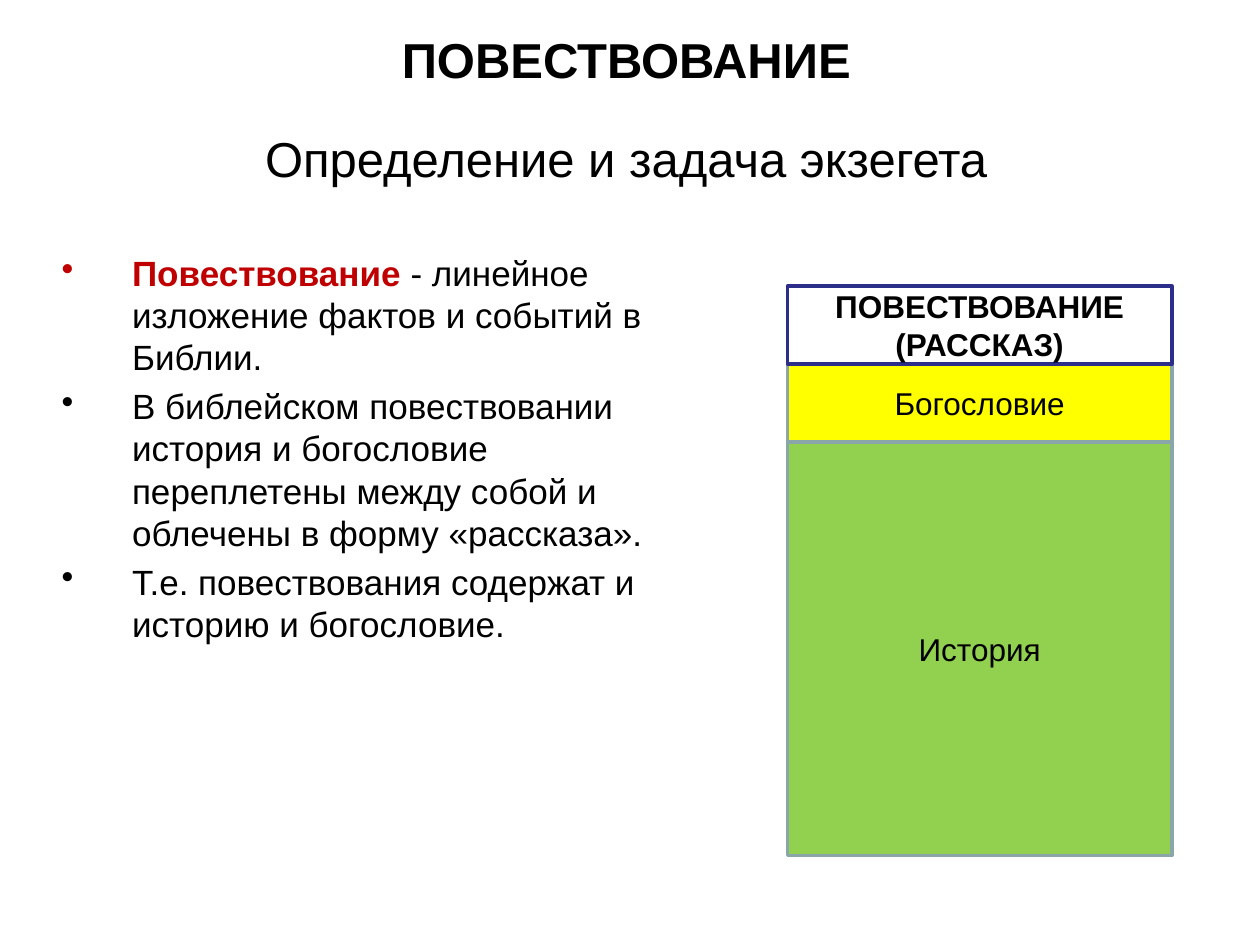
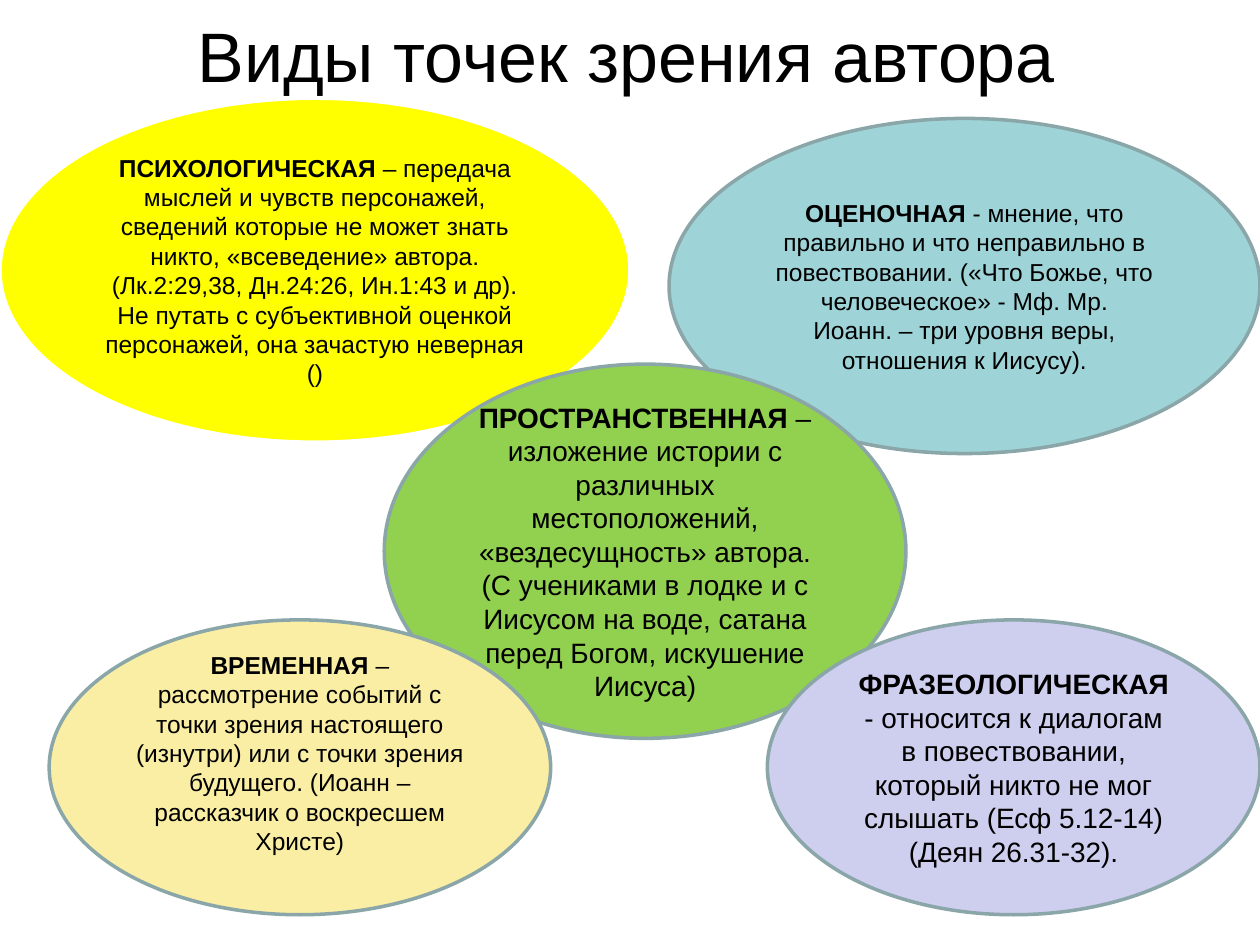
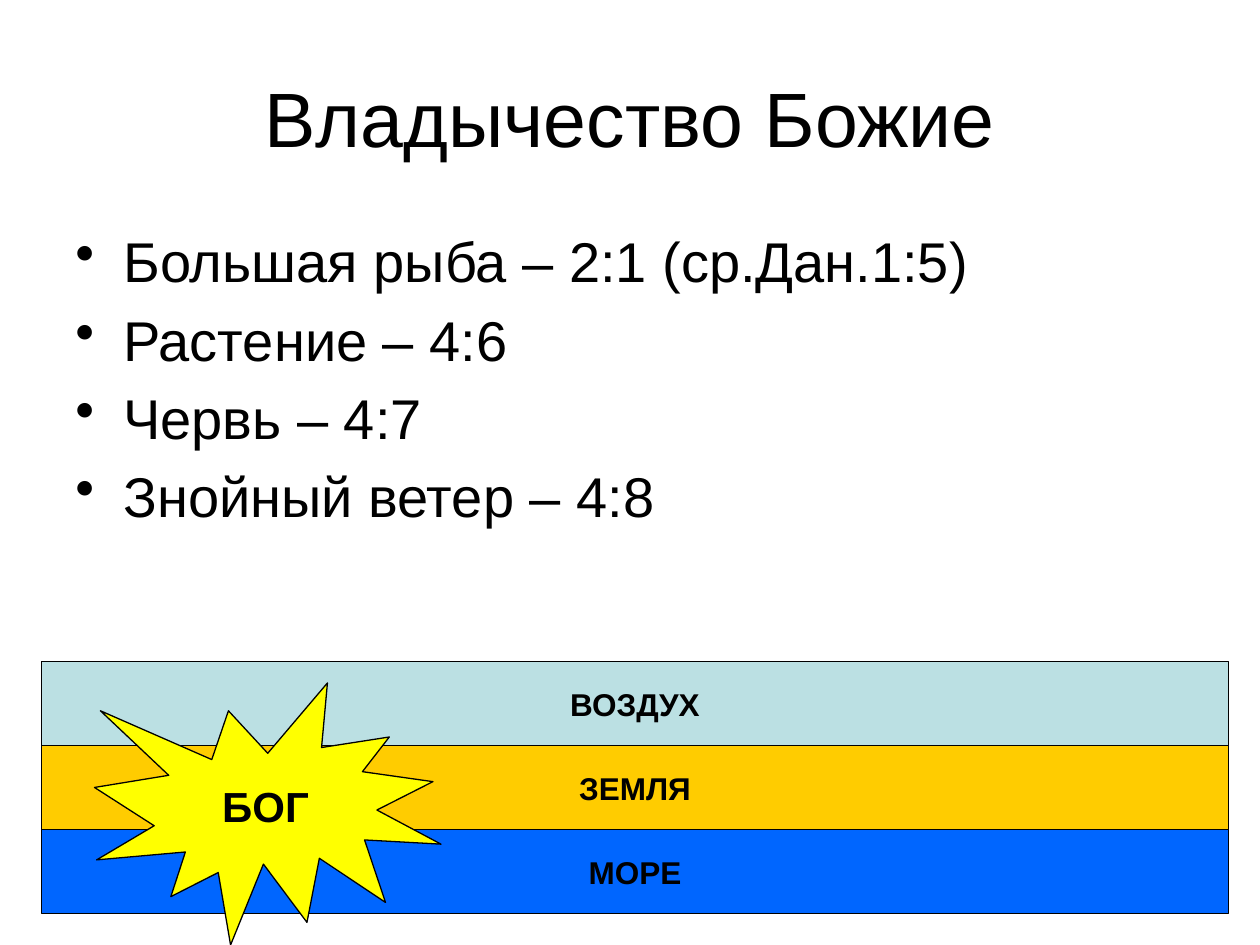
from lxml import etree
from pptx import Presentation
from pptx.dml.color import RGBColor
from pptx.enum.shapes import MSO_SHAPE
from pptx.enum.text import MSO_ANCHOR, PP_ALIGN
from pptx.oxml.ns import qn
from pptx.util import Inches, Pt

RECTANGLE = MSO_SHAPE.RECTANGLE
OVAL = MSO_SHAPE.OVAL
BURST = MSO_SHAPE.EXPLOSION1
MIDDLE = MSO_ANCHOR.MIDDLE
TOP = MSO_ANCHOR.TOP
CENTER = PP_ALIGN.CENTER
LEFT = PP_ALIGN.LEFT

BLACK = RGBColor(0x00, 0x00, 0x00)
WHITE = RGBColor(0xFF, 0xFF, 0xFF)
RED = RGBColor(0xC0, 0x00, 0x00)
YELLOW = RGBColor(0xFF, 0xFF, 0x00)
GREEN = RGBColor(0x92, 0xD0, 0x50)
GREY_TEAL = RGBColor(0x8A, 0xA6, 0xA8)
NAVY = RGBColor(0x2D, 0x2D, 0x8A)
TEAL = RGBColor(0x9E, 0xD3, 0xD7)
CREAM = RGBColor(0xFA, 0xEE, 0xA4)
LILAC = RGBColor(0xCE, 0xCE, 0xEF)
SEA_BLUE = RGBColor(0x00, 0x66, 0xFF)
EARTH = RGBColor(0xFF, 0xCC, 0x00)
AIR = RGBColor(0xBB, 0xE0, 0xE3)


class Deck:
    font_name = "Arial"

    def __init__(self):
        self.presentation = Presentation()
        self.presentation.slide_width = Inches(10)
        self.presentation.slide_height = Inches(7.5)
        self.slide = None

    def new_slide(self):
        layout = self.presentation.slide_layouts[6]
        self.slide = self.presentation.slides.add_slide(layout)

    def fill_frame(self, frame, lines, size, bold=False, lead="", lead_color=BLACK,
                   align=CENTER, anchor=MIDDLE, indent=None):
        frame.vertical_anchor = anchor
        for index, line in enumerate(lines):
            paragraph = frame.paragraphs[0] if index == 0 else frame.add_paragraph()
            paragraph.alignment = align
            if indent:
                self.add_bullet(paragraph, indent)
                if index:
                    paragraph.space_before = Pt(size * 0.2)
            paragraph.font.name = self.font_name
            paragraph.font.size = Pt(size)
            paragraph.font.bold = bold
            paragraph.font.color.rgb = BLACK
            if lead and index == 0:
                run = paragraph.add_run()
                run.text = lead
                run.font.bold = True
                run.font.color.rgb = lead_color
            for part_index, part in enumerate(line.split("\n")):
                if part_index:
                    paragraph.add_line_break()
                paragraph.add_run().text = part

    def add_bullet(self, paragraph, indent):
        properties = paragraph._p.get_or_add_pPr()
        properties.set("marL", str(Inches(indent)))
        properties.set("indent", str(-Inches(indent)))
        etree.SubElement(properties, qn("a:buChar")).set("char", "•")

    def text(self, box, lines, size, **style):
        frame = self.slide.shapes.add_textbox(*map(Inches, box)).text_frame
        frame.word_wrap = True
        self.fill_frame(frame, lines, size, **style)

    def title(self, box, text, size, bold=False):
        self.text(box, [text], size, bold=bold)

    def bullets(self, box, lines, size, indent, **style):
        self.text(box, lines, size, indent=indent, align=LEFT, anchor=TOP, **style)

    def shape(self, kind, box, fill, line, line_width, lines, size, wrap=True, **style):
        shape = self.slide.shapes.add_shape(kind, *map(Inches, box))
        shape.shadow.inherit = False
        shape.fill.solid()
        shape.fill.fore_color.rgb = fill
        shape.line.color.rgb = line
        shape.line.width = Pt(line_width)
        shape.text_frame.word_wrap = wrap
        self.fill_frame(shape.text_frame, lines, size, **style)
        return shape

    def stack(self, left, top, width, bands, line_width, wrap=True):
        bottom = top + sum(height for _, height, *_ in bands)
        for label, height, fill, line, bold in reversed(bands):
            bottom -= height
            self.shape(RECTANGLE, (left, bottom, width, height), fill, line,
                       line_width, [label], 18, wrap=wrap, bold=bold)

    def ellipse(self, box, fill, lead, lines, size, line=GREY_TEAL):
        return self.shape(OVAL, box, fill, line, 2, lines, size, lead=lead)


def build_narrative(deck):
    deck.new_slide()
    deck.title((0.47, 0, 9, 0.94), "ПОВЕСТВОВАНИЕ", 28, bold=True)
    deck.bullets((0.39, 1.95, 5.16, 3.91), [
        " - линейное изложение фактов и событий в Библии.",
        "В библейском повествовании история и богословие переплетены между собой "
        "и облечены в форму «рассказа».",
        "Т.е. повествования содержат и историю и богословие.",
    ], 20, 0.56, lead="Повествование", lead_color=RED)
    deck.stack(6.25, 2.27, 3.05, [
        ("ПОВЕСТВОВАНИЕ (РАССКАЗ)", 0.62, WHITE, NAVY, True),
        ("Богословие", 0.62, YELLOW, GREY_TEAL, False),
        ("История", 3.28, GREEN, GREY_TEAL, False),
    ], 2)
    deck.title((0.47, 0.78, 9, 0.94), "Определение и задача экзегета", 28)


def build_viewpoints(deck):
    deck.new_slide()
    deck.title((0.47, 0, 9, 0.86), "Виды точек зрения автора", 40)
    deck.ellipse((0, 0.78, 5, 2.73), YELLOW, "ПСИХОЛОГИЧЕСКАЯ", [
        " – передача мыслей и чувств персонажей, сведений которые не может знать "
        "никто, «всеведение» автора. (Лк.2:29,38, Дн.24:26, Ин.1:43 и др). "
        "Не путать с субъективной оценкой персонажей, она зачастую неверная ()",
    ], 14, line=WHITE)
    deck.ellipse((5.31, 0.94, 4.69, 2.66), TEAL, "ОЦЕНОЧНАЯ", [
        " - мнение, что правильно и что неправильно в повествовании. "
        "(«Что Божье, что человеческое» - Мф. Мр.",
        "Иоанн. – три уровня веры, отношения к Иисусу).",
    ], 14)
    deck.ellipse((3.05, 2.89, 4.14, 2.97), GREEN, "ПРОСТРАНСТВЕННАЯ", [
        " – изложение истории с различных местоположений, «вездесущность» автора.\n"
        "(С учениками в лодке и с Иисусом на воде, сатана перед Богом, "
        "искушение Иисуса)",
    ], 16)
    temporal = deck.ellipse((0.39, 4.92, 3.98, 2.34), CREAM, "ВРЕМЕННАЯ", [
        " –",
        "рассмотрение событий с точки зрения настоящего (изнутри) или с точки "
        "зрения будущего. (Иоанн – рассказчик о воскресшем Христе)",
    ], 14)
    temporal.text_frame.margin_bottom = Inches(0.28)
    deck.ellipse((6.09, 4.92, 3.91, 2.34), LILAC, "ФРАЗЕОЛОГИЧЕСКАЯ", [
        " - относится к диалогам\nв повествовании, который никто не мог слышать "
        "(Есф 5.12-14) (Деян 26.31-32).",
    ], 16)


def build_dominion(deck):
    deck.new_slide()
    deck.title((0.5, 0.3, 9, 1.25), "Владычество Божие", 44)
    deck.bullets((0.5, 1.75, 8.58, 3), [
        "Большая рыба – 2:1 (ср.Дан.1:5)",
        "Растение – 4:6",
        "Червь – 4:7",
        "Знойный ветер – 4:8",
    ], 32, 0.38)
    realms = [("ВОЗДУХ", AIR), ("ЗЕМЛЯ", EARTH), ("МОРЕ", SEA_BLUE)]
    realm_height = 2 / len(realms)
    deck.stack(0.33, 5.25, 9.42,
               [(name, realm_height, fill, BLACK, True) for name, fill in realms],
               0.75, wrap=False)
    deck.shape(BURST, (0.75, 5.42, 2.75, 2.08), YELLOW, BLACK, 0.75,
               ["БОГ"], 24, wrap=False, bold=True)


def main():
    deck = Deck()
    build_narrative(deck)
    build_viewpoints(deck)
    build_dominion(deck)
    deck.presentation.save("out.pptx")


if __name__ == "__main__":
    main()
